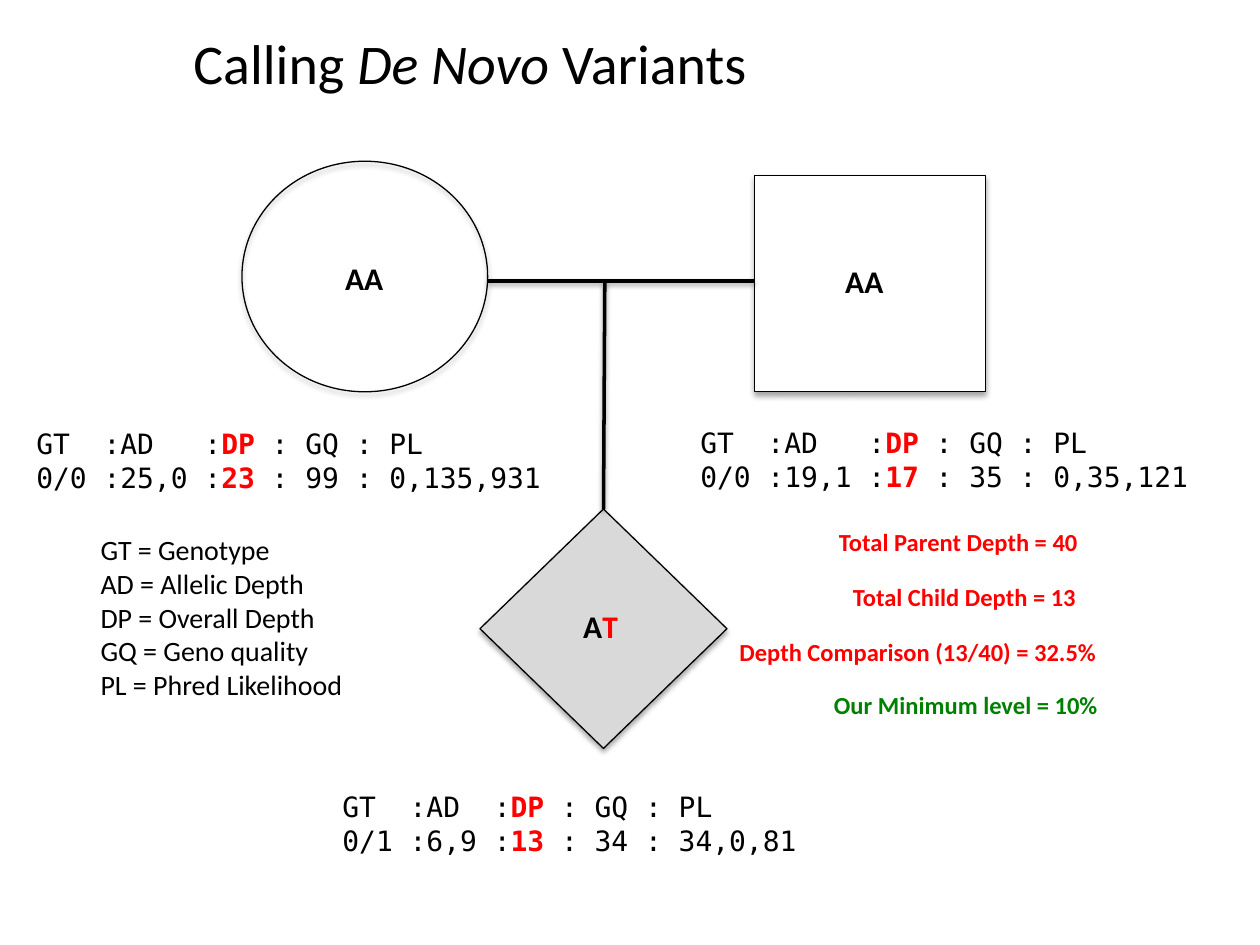
from dataclasses import dataclass
from typing import Optional

import pptx
import pptx.dml.color
import pptx.enum.shapes
import pptx.enum.text
import pptx.oxml.ns
import pptx.util
from lxml import etree

Inches = pptx.util.Inches
Pt = pptx.util.Pt
RGB = pptx.dml.color.RGBColor
Shape = pptx.enum.shapes.MSO_SHAPE
qn = pptx.oxml.ns.qn


@dataclass(frozen=True)
class Theme:
    ink: RGB = RGB(0, 0, 0)
    paper: RGB = RGB(255, 255, 255)
    child_fill: RGB = RGB(0xD9, 0xD9, 0xD9)
    alert: RGB = RGB(255, 0, 0)
    passed: RGB = RGB(0, 0x80, 0)
    body_font: str = "Calibri"
    code_font: str = "DejaVu Sans Mono"
    title_size: int = 32
    genotype_size: int = 18
    body_size: int = 16
    depth_size: int = 14


THEME = Theme()


@dataclass(frozen=True)
class Box:
    left: float
    top: float
    width: float
    height: float

    def emu(self) -> tuple:
        return tuple(Inches(v) for v in (self.left, self.top, self.width, self.height))


@dataclass(frozen=True)
class Run:
    text: str
    color: Optional[RGB] = None
    bold: Optional[bool] = None
    italic: Optional[bool] = None


@dataclass(frozen=True)
class Member:
    """One person of the pedigree with genotype and variant call."""
    symbol: Shape
    symbol_box: Box
    fill: Optional[RGB]
    genotype: list[Run]
    genotype_at: tuple[float, float]
    call_at: tuple[float, float]
    call: list[tuple[str, str, str]]  # text before, depth, text after


@dataclass(frozen=True)
class DepthNote:
    text: str
    box: Box
    color: RGB


MEMBERS = [
    Member(Shape.OVAL, Box(1.92, 1.28, 1.95, 1.83), None,
           [Run("AA")], (2.64, 2.01), (0.19, 3.34),
           [("GT  :AD   :", "DP ", ": GQ : PL"),
            ("0/0 :25,0 :", "23 ", ": 99 : 0,135,931")]),
    Member(Shape.RECTANGLE, Box(5.99, 1.39, 1.83, 1.72), THEME.paper,
           [Run("AA")], (6.61, 2.03), (5.46, 3.33),
           [("GT  :AD   :", "DP ", ": GQ : PL"),
            ("0/0 :19,1 :", "17 ", ": 35 : 0,35,121")]),
    Member(Shape.DIAMOND, Box(3.81, 4.04, 1.96, 1.9), THEME.child_fill,
           [Run("A"), Run("T", THEME.alert)], (4.53, 4.77), (2.62, 6.22),
           [("GT  :AD  :", "DP ", ": GQ : PL"),
            ("0/1 :6,9 :", "13 ", ": 34 : 34,0,81")]),
]

LEGEND = ["GT = Genotype", "AD = Allelic Depth", "DP = Overall Depth",
          "GQ = Geno quality", "PL = Phred Likelihood"]

DEPTH_NOTES = [
    DepthNote("Total Parent Depth = 40", Box(6.56, 4.13, 2.89, 0.34), THEME.alert),
    DepthNote("Total Child Depth = 13", Box(6.67, 4.57, 2.89, 0.34), THEME.alert),
    DepthNote("Depth Comparison (13/40) = 32.5%", Box(5.77, 5.01, 4.03, 0.34), THEME.alert),
    DepthNote("Our Minimum level = 10%", Box(6.52, 5.43, 2.89, 0.34), THEME.passed),
]


def add_shadow(part, opacity: int, distance: float) -> None:
    """Give the part a soft shadow straight below it."""
    properties = part._element.spPr
    effects = properties.find(qn("a:effectLst"))
    if effects is None:
        effects = etree.SubElement(properties, qn("a:effectLst"))
    shadow = etree.SubElement(effects, qn("a:outerShdw"), blurRad=str(Pt(3.1)),
                              dist=str(Pt(distance)), dir="5400000", rotWithShape="0")
    color = etree.SubElement(shadow, qn("a:srgbClr"), val=str(THEME.ink))
    etree.SubElement(color, qn("a:alpha"), val=str(opacity * 1000))


def write_runs(paragraph, runs: list[Run], size: int, font: str = THEME.body_font,
               color: RGB = THEME.ink, bold: bool = False) -> None:
    paragraph.font.name = font
    paragraph.font.size = Pt(size)
    paragraph.font.bold = bold
    paragraph.font.color.rgb = color
    for part in runs:
        run = paragraph.add_run()
        run.text = part.text
        run.font.bold = part.bold
        run.font.italic = part.italic
        if part.color is not None:
            run.font.color.rgb = part.color


def add_text(slide, box: Box, lines: list[list[Run]], size: int, **style) -> None:
    frame = slide.shapes.add_textbox(*box.emu()).text_frame
    frame.word_wrap = True
    for index, runs in enumerate(lines):
        paragraph = frame.add_paragraph() if index else frame.paragraphs[0]
        write_runs(paragraph, runs, size, **style)


def add_symbol(slide, member: Member):
    symbol = slide.shapes.add_shape(member.symbol, *member.symbol_box.emu())
    if member.fill is None:
        symbol.fill.background()
    else:
        symbol.fill.solid()
        symbol.fill.fore_color.rgb = member.fill
    symbol.line.color.rgb = THEME.ink
    symbol.line.width = Pt(0.75)
    symbol.shadow.inherit = False
    add_shadow(symbol, opacity=35, distance=1.8)
    return symbol


def add_family_line(slide, start: tuple[float, float], end: tuple[float, float]):
    line = slide.shapes.add_connector(pptx.enum.shapes.MSO_CONNECTOR.STRAIGHT,
                                      *(Inches(v) for v in start + end))
    line.line.color.rgb = THEME.ink
    line.line.width = Pt(2)
    add_shadow(line, opacity=38, distance=1.6)
    return line


def add_call(slide, member: Member) -> None:
    lines = [[Run(before), Run(depth, THEME.alert, bold=True), Run(after)]
             for before, depth, after in member.call]
    add_text(slide, Box(*member.call_at, 4.34, 0.64), lines,
             THEME.body_size, font=THEME.code_font)


def add_title(slide) -> None:
    title = slide.shapes.title
    title.left, title.top, title.width, title.height = Box(0.5, 0.04, 6.46, 0.91).emu()
    title.text_frame.vertical_anchor = pptx.enum.text.MSO_ANCHOR.MIDDLE
    heading = title.text_frame.paragraphs[0]
    heading.alignment = pptx.enum.text.PP_ALIGN.CENTER
    write_runs(heading, [Run("Calling "), Run("De Novo ", italic=True), Run("Variants")],
               THEME.title_size)


def main() -> None:
    deck = pptx.Presentation()
    deck.slide_width, deck.slide_height = Inches(10), Inches(7.5)
    slide = deck.slides.add_slide(deck.slide_layouts[5])
    add_title(slide)

    mother, father, child = [add_symbol(slide, member) for member in MEMBERS]
    couple_y = 2.23
    add_family_line(slide, (3.87, couple_y), (5.99, couple_y))
    descent = add_family_line(slide, (4.8, couple_y), (4.79, 4.04))
    descent.end_connect(child, 0)

    for member in MEMBERS:
        add_text(slide, Box(*member.genotype_at, 0.75, 0.4), [member.genotype],
                 THEME.genotype_size, bold=True)
        add_call(slide, member)

    add_text(slide, Box(0.7, 4.18, 2.43, 1.72), [[Run(entry)] for entry in LEGEND],
             THEME.body_size)
    for note in DEPTH_NOTES:
        add_text(slide, note.box, [[Run(note.text)]], THEME.depth_size,
                 color=note.color, bold=True)
    deck.save("out.pptx")


if __name__ == "__main__":
    main()
